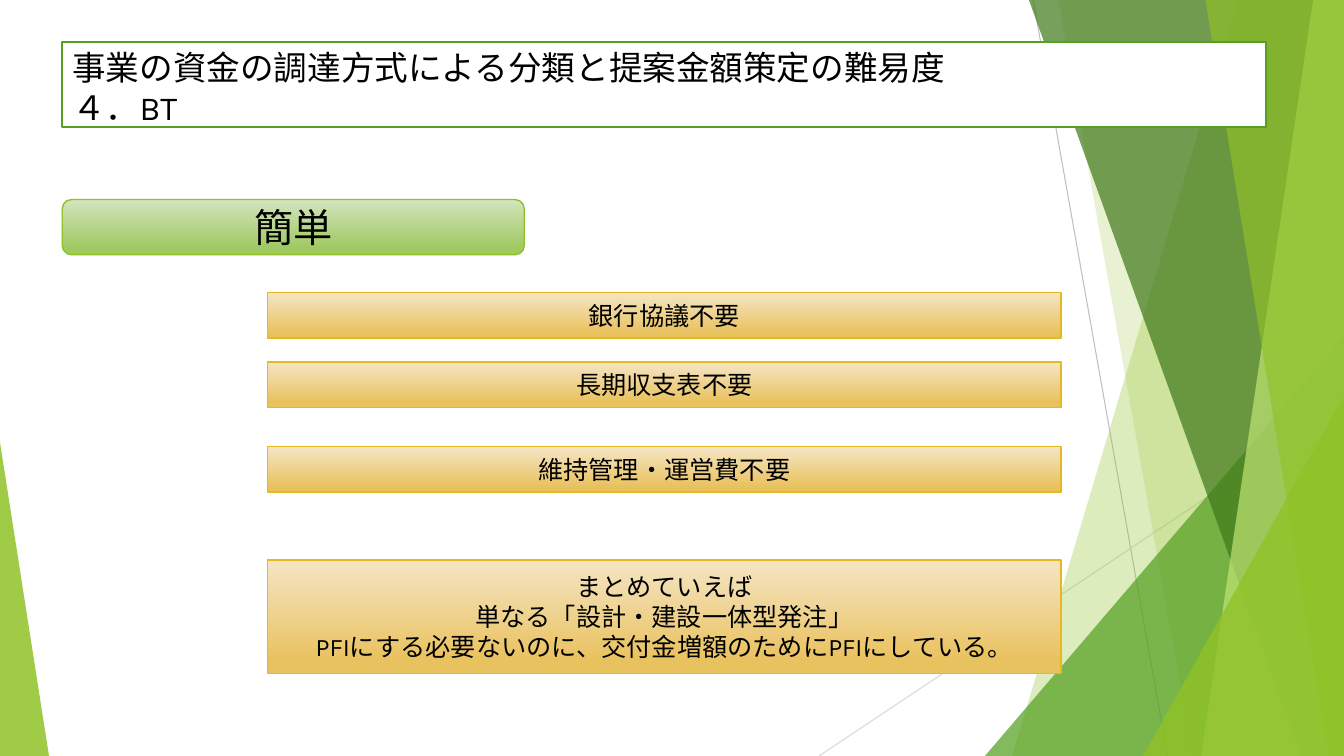
import pptx
import pptx.dml.color
import pptx.enum.shapes
import pptx.enum.text
import pptx.oxml
import pptx.oxml.ns
import pptx.util
from dataclasses import dataclass
from lxml import etree

Pt = pptx.util.Pt
qn = pptx.oxml.ns.qn
SHAPE = pptx.enum.shapes.MSO_SHAPE
ALIGN = pptx.enum.text.PP_ALIGN
ANCHOR = pptx.enum.text.MSO_ANCHOR
WIDTH, HEIGHT = 960, 540


def rgb(value):
    return pptx.dml.color.RGBColor.from_string(value)


@dataclass(frozen=True)
class Theme:
    font: str = "Karla"
    text: str = "000000"
    paper: str = "FFFFFF"
    lime: str = "90C226"
    pale_lime: str = "C0E474"
    green: str = "54A021"
    dark_green: str = "3F7819"
    gold: str = "E6B91E"
    grey: str = "BFBFBF"
    light_grey: str = "D9D9D9"
    lime_blend: tuple = ("D3E5BE", "A0C962")
    gold_blend: tuple = ("F5E5C5", "E9C260")
    title_size: int = 24
    heading_size: int = 28
    body_size: int = 18


class Deck:
    """Holds the theme and the slide being drawn; all lengths are points."""

    def __init__(self, prs, theme):
        self.theme = theme
        self.s = prs.slides.add_slide(prs.slide_layouts[5])

    def line(self, x1, y1, x2, y2, color):
        kind = pptx.enum.shapes.MSO_CONNECTOR.STRAIGHT
        c = self.s.shapes.add_connector(kind, Pt(x1), Pt(y1), Pt(x2), Pt(y2))
        c.line.color.rgb = rgb(color)
        c.line.width = Pt(0.75)
        etree.SubElement(c.element.spPr, qn("a:effectLst"))

    def glass(self, sp, color, opacity):
        """Give a shape a see-through fill and no outline."""
        sp.shadow.inherit = False
        sp.fill.solid()
        sp.fill.fore_color.rgb = rgb(color)
        sp.line.fill.background()
        clr = sp.element.spPr.find(qn("a:solidFill"))[0]
        etree.SubElement(clr, qn("a:alpha"), val=str(opacity * 1000))

    def band(self, top_x, bottom_x, color, opacity):
        """Fill from a slanted left edge to the right side of the slide."""
        corners = [(WIDTH, 0), (WIDTH, HEIGHT), (bottom_x, HEIGHT)]
        outline = self.s.shapes.build_freeform(Pt(top_x), Pt(0))
        outline.add_line_segments([(Pt(x), Pt(y)) for x, y in corners], close=True)
        self.glass(outline.convert_to_shape(), color, opacity)

    def corner(self, x, y, w, apex, color, opacity):
        """Place a right triangle on the bottom edge of the slide."""
        sp = self.s.shapes.add_shape(
            SHAPE.ISOSCELES_TRIANGLE, Pt(x), Pt(y), Pt(w), Pt(HEIGHT - y))
        sp.adjustments[0] = apex
        self.glass(sp, color, opacity)

    def set_text(self, tf, lines, size, align, anchor):
        settings = {"word_wrap": True, "vertical_anchor": anchor,
                    "auto_size": pptx.enum.text.MSO_AUTO_SIZE.NONE}
        for name, value in settings.items():
            setattr(tf, name, value)
        tf.text = "\n".join(lines)
        for p in tf.paragraphs:
            p.alignment = align
            for r in p.runs:
                for name, value in {"name": self.theme.font, "size": Pt(size)}.items():
                    setattr(r.font, name, value)
                r.font.color.rgb = rgb(self.theme.text)
                etree.SubElement(r.font._element, qn("a:ea"), typeface=self.theme.font)

    def title(self, text, x, y, w, h):
        sp = self.s.shapes.title
        box = {"left": x, "top": y, "width": w, "height": h}
        for name, value in box.items():
            setattr(sp, name, Pt(value))
        sp.fill.solid()
        sp.fill.fore_color.rgb = rgb(self.theme.paper)
        sp.line.color.rgb = rgb(self.theme.green)
        sp.line.width = Pt(1.5)
        self.set_text(sp.text_frame, [text], self.theme.title_size, ALIGN.LEFT, ANCHOR.TOP)
        sp.element.getparent().append(sp.element)  # in front of the decoration

    def panel(self, kind, x, y, w, h, lines, size, blend, outline):
        sp = self.s.shapes.add_shape(kind, Pt(x), Pt(y), Pt(w), Pt(h))
        sp.shadow.inherit = False
        sp.fill.gradient()
        sp.fill.gradient_angle = 270
        for stop, color, position in zip(sp.fill.gradient_stops, blend, (0, 0.88)):
            stop.color.rgb = rgb(color)
            stop.position = position
        sp.line.color.rgb = rgb(outline)
        sp.line.width = Pt(1)
        self.set_text(sp.text_frame, lines, size, ALIGN.CENTER, ANCHOR.MIDDLE)


def main():
    prs = pptx.Presentation()
    prs.slide_width, prs.slide_height = Pt(WIDTH), Pt(HEIGHT)
    t = Theme()
    deck = Deck(prs, t)

    deck.line(738, 0, 834, HEIGHT, t.grey)
    deck.line(WIDTH, 290, 585, HEIGHT, t.light_grey)
    deck.band(884, 723, t.lime, 30)
    deck.band(756, 852, t.lime, 20)
    deck.corner(703.5, 240, 256.5, 1, t.green, 72)
    deck.band(735, 929.5, t.dark_green, 70)
    deck.band(938, 858, t.pale_lime, 70)
    deck.band(861, 949, t.lime, 65)
    deck.corner(816.5, 283, 143.5, 1, t.lime, 80)
    deck.corner(0, 316, 35, 0, t.lime, 85)

    left = 44.5
    deck.title("事業の資金の調達方式による分類と提案金額策定の難易度\v４．BT",
               left, 30, 860, 60.5)
    deck.panel(SHAPE.ROUNDED_RECTANGLE, left, 142.5, 330, 39.5,
               ["簡単"], t.heading_size, t.lime_blend, t.lime)

    reasons = [
        (209, 32.5, ["銀行協議不要"]),
        (258.5, 32.5, ["長期収支表不要"]),
        (319, 32.5, ["維持管理・運営費不要"]),
        (400, 81, ["まとめていえば", "単なる「設計・建設一体型発注」",
                   "PFIにする必要ないのに、交付金増額のためにPFIにしている。"]),
    ]
    for y, h, lines in reasons:
        deck.panel(SHAPE.RECTANGLE, 191, y, 567, h,
                   lines, t.body_size, t.gold_blend, t.gold)

    prs.save("out.pptx")


if __name__ == "__main__":
    main()
